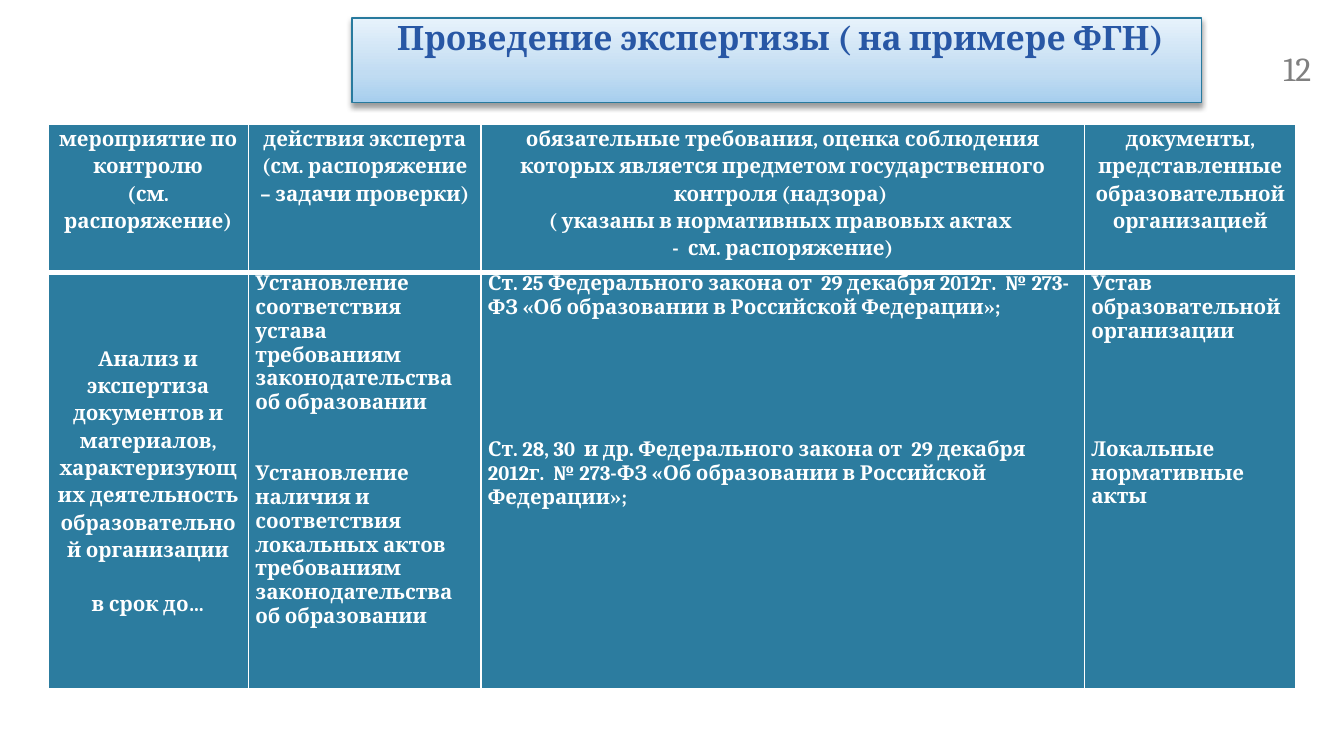
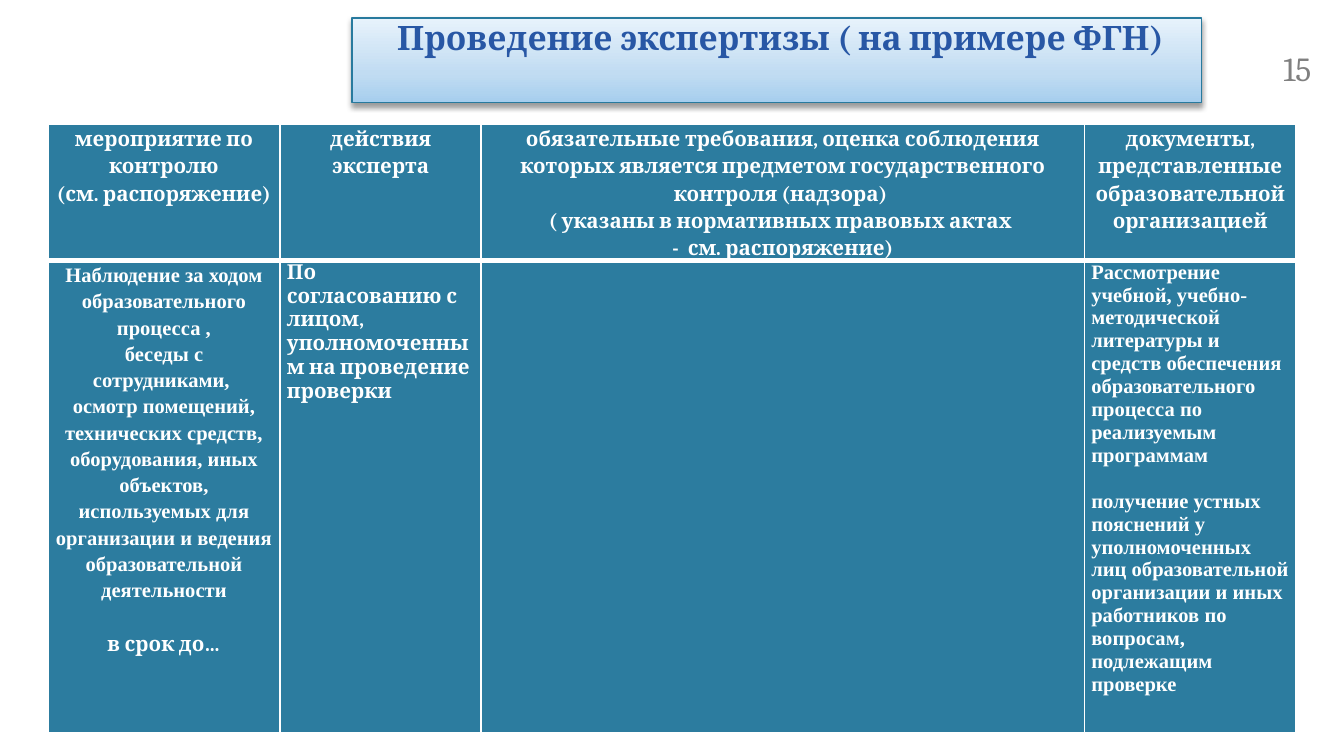
from lxml import etree
from pptx import Presentation
from pptx.dml.color import RGBColor
from pptx.enum.text import MSO_ANCHOR, MSO_AUTO_SIZE, PP_ALIGN
from pptx.oxml import parse_xml
from pptx.oxml.ns import nsdecls, qn
from pptx.util import Pt

PX = 4572  # 200 px to the inch
CENTER, LEFT = PP_ALIGN.CENTER, PP_ALIGN.LEFT
TOP, MIDDLE = MSO_ANCHOR.TOP, MSO_ANCHOR.MIDDLE
NO_AUTOFIT = MSO_AUTO_SIZE.NONE

SERIF, TIMES = "Cambria", "Times New Roman"
WHITE, TEAL, EDGE, BLUE, GRAY = "FFFFFF", "2C7C9F", "287A9E", "2857A5", "808080"
TITLE = " Проведение экспертизы ( на примере ФГН)"
TITLE_STOPS = [(0, "A6CEEE"), (35, "C1DCF2"), (100, "E7F2FB")]
THIN, THICK = 1, 3

# Cells are lists of paragraphs: (text, space before in points, font)
ORDER = ("(см. распоряжение)", 0, SERIF)
ACTIVITY = [("мероприятие по контролю", 0, SERIF), ORDER]
REQUIREMENTS = [
    ("обязательные требования, оценка соблюдения которых является предметом "
     "государственного контроля (надзора) ", 0, SERIF),
    ("( указаны в нормативных правовых актах ", 0, SERIF),
    ("-  см. распоряжение)", 0, SERIF),
]
DOCUMENTS = [("документы, представленные образовательной организацией", 0, SERIF)]
ACTIONS = ("действия эксперта", 0, SERIF)
DEADLINE = ("в срок до…", 14.5, SERIF)

PAGES = [
    {
        "number": "12",
        "columns": [299, 346, 898, 315],
        "rows": [220, 620],
        "first_anchor": MIDDLE,
        "cells": [
            [ACTIVITY,
             [ACTIONS, ("(см. распоряжение – задачи проверки)", 0, SERIF)],
             REQUIREMENTS, DOCUMENTS],
            [[("Анализ и экспертиза документов и материалов, характеризующих "
               "деятельность образовательной организации", 0, SERIF), DEADLINE],
             [("Установление соответствия устава требованиям законодательства "
               "об образовании", 0, SERIF),
              ("Установление наличия и соответствия локальных актов требованиям "
               "законодательства об образовании", 25.5, SERIF)],
             [("Ст. 25 Федерального закона от  29 декабря 2012г.  № 273-ФЗ "
               "«Об образовании в Российской Федерации»;", 0, SERIF),
              ("Ст. 28, 30  и др. Федерального закона от  29 декабря 2012г.  № 273-ФЗ "
               "«Об образовании в Российской Федерации»;", 63.5, SERIF)],
             [("Устав образовательной организации", 0, SERIF),
              ("Локальные нормативные акты", 50.5, SERIF)]],
        ],
    },
    {
        "number": "15",
        "columns": [346, 299, 898, 315],
        "rows": [180, 702],
        "first_anchor": TOP,
        "cells": [
            [ACTIVITY, [ACTIONS], REQUIREMENTS, DOCUMENTS],
            [[("Наблюдение за ходом образовательного процесса ,", 0, TIMES),
              ("беседы с сотрудниками, ", 0, TIMES),
              ("осмотр помещений, технических средств, оборудования, иных объектов, "
               "используемых для организации и ведения образовательной деятельности",
               0, TIMES), DEADLINE],
             [("По согласованию с лицом, уполномоченным на проведение проверки",
               0, SERIF)],
             [],
             [("Рассмотрение учебной, учебно-методической литературы и средств "
               "обеспечения образовательного процесса по реализуемым программам",
               0, TIMES),
              ("получение устных пояснений у уполномоченных лиц образовательной "
               "организации и иных работников по вопросам, подлежащим проверке",
               12.5, TIMES)]],
        ],
    },
]


def color(value):
    return RGBColor.from_string(value)


def format_paragraph(para, size, value, font, bold, align, spacing):
    para.alignment = align
    para.line_spacing = spacing
    for span in para.runs:
        span.font.size = Pt(size)
        span.font.name = font
        span.font.bold = bold
        span.font.color.rgb = color(value)


deck = Presentation()
deck.slide_width, deck.slide_height = 2000 * PX, 1125 * PX
title_only = deck.slide_layouts[5]

for page in PAGES:
    slide = deck.slides.add_slide(title_only)

    # Title band with gradient, outline and soft shadow
    title = slide.shapes.title
    title.left, title.top, title.width, title.height = (
        524 * PX, 27 * PX, 1264 * PX, 126 * PX)
    stops = "".join(f'<a:gs pos="{pos * 1000}"><a:srgbClr val="{value}"/></a:gs>'
                    for pos, value in TITLE_STOPS)
    title.element.spPr.append(parse_xml(
        f'<a:gradFill {nsdecls("a")} rotWithShape="1"><a:gsLst>{stops}</a:gsLst>'
        '<a:lin ang="16200000" scaled="0"/></a:gradFill>'))
    title.line.color.rgb = color(EDGE)
    title.line.width = Pt(0.75)
    title.shadow.inherit = False
    title.element.spPr.find(qn("a:effectLst")).append(parse_xml(
        f'<a:outerShdw {nsdecls("a")} blurRad="{Pt(3.1)}" dist="{Pt(1.6)}" '
        'dir="5400000" rotWithShape="0"><a:srgbClr val="000000">'
        '<a:alpha val="38000"/></a:srgbClr></a:outerShdw>'))
    frame = title.text_frame
    frame.text = TITLE
    frame.auto_size = NO_AUTOFIT
    frame.vertical_anchor = TOP
    frame.margin_top = 9 * PX
    format_paragraph(frame.paragraphs[0], 18, BLUE, SERIF, True, CENTER, 0.8)

    # Inspection table
    columns, rows = page["columns"], page["rows"]
    table = slide.shapes.add_table(
        len(rows), len(columns), 71 * PX, 185 * PX,
        sum(columns) * PX, sum(rows) * PX).table
    table.horz_banding = False
    for column, width in zip(table.columns, columns):
        column.width = width * PX
    for row_index, height in enumerate(rows):
        table.rows[row_index].height = height * PX
        is_header = row_index == 0
        borders = {"lnL": THIN, "lnR": THIN,
                   "lnT": THIN if is_header else THICK,
                   "lnB": THICK if is_header else THIN}
        for column_index, content in enumerate(page["cells"][row_index]):
            cell = table.cell(row_index, column_index)
            cell.margin_left = cell.margin_right = 10 * PX
            cell.margin_top = cell.margin_bottom = 0
            is_first = column_index == 0 and not is_header
            cell.vertical_anchor = page["first_anchor"] if is_first else TOP

            # Borders come before the fill
            properties = cell._tc.get_or_add_tcPr()
            for side, width in borders.items():
                line = etree.SubElement(properties, qn(f"a:{side}"), w=str(Pt(width)))
                solid = etree.SubElement(line, qn("a:solidFill"))
                etree.SubElement(solid, qn("a:srgbClr"), val=WHITE)
            cell.fill.solid()
            cell.fill.fore_color.rgb = color(TEAL)

            # Text
            centered = is_header or is_first
            for index, (text, gap, font) in enumerate(content):
                frame = cell.text_frame
                para = frame.add_paragraph() if index else frame.paragraphs[0]
                para.text = text
                if gap:
                    para.space_before = Pt(gap)
                format_paragraph(para, 11, WHITE, font, True,
                                 CENTER if centered else LEFT,
                                 1.15 if centered else 1.0)

    # Page number
    box = slide.shapes.add_textbox(1890 * PX, 62 * PX, 110 * PX, 60 * PX)
    box.text_frame.word_wrap = True
    box.text_frame.text = page["number"]
    format_paragraph(box.text_frame.paragraphs[0], 18, GRAY, SERIF, False, LEFT, 1.0)

deck.save("out.pptx")
